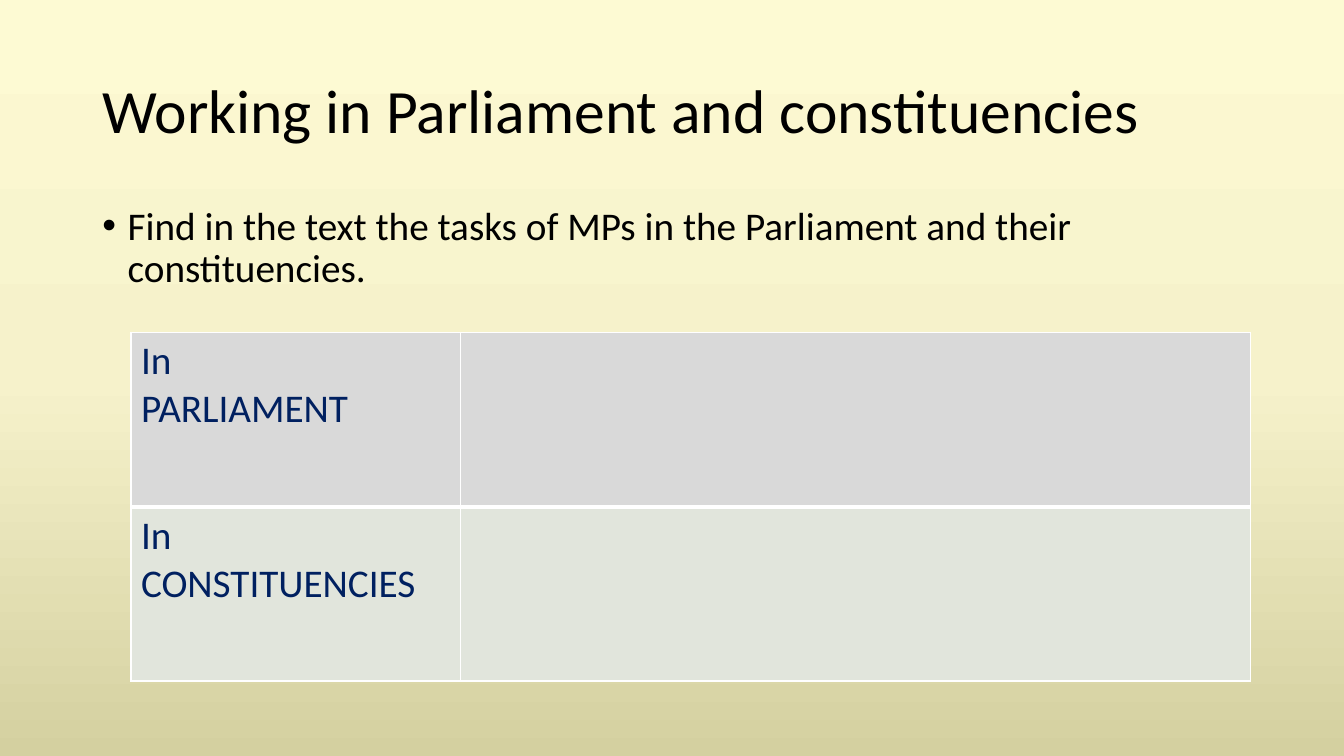
from copy import deepcopy
from lxml import etree
from pptx import Presentation
from pptx import util as u
from pptx.dml.color import RGBColor
from pptx.enum import text
from pptx.oxml import ns

FONT = "Calibri"
BLACK, NAVY, WHITE = "000000", "002060", "FFFFFF"
STOPS = [(0, "FDFAD3"), (0.5, "F6F2CB"), (1, "D4D0A0")]
TITLE = "Working in Parliament and constituencies"
TASK = "Find in the text the tasks of MPs in the Parliament and their constituencies."
ROWS = [
    (["In", "PARLIAMENT"], "D9D9D9"),
    (["In", "CONSTITUENCIES"], "E1E5DC"),
]
COLS = [8.3, 19.92]
HIGH = 4.39
LEFT, WIDE = 2.33, 29.21
THIN, THICK = 1, 3


def paint(hue):
    return RGBColor.from_string(hue)


def write(para, words, size, hue):
    run = para.add_run()
    run.text = words
    run.font.name = FONT
    run.font.size = u.Pt(size)
    run.font.color.rgb = paint(hue)


def add_box(slide, top, high, words, size, anchor):
    box = slide.shapes.add_textbox(u.Cm(LEFT), u.Cm(top), u.Cm(WIDE), u.Cm(high))
    frame = box.text_frame
    frame.word_wrap = True
    frame.vertical_anchor = anchor
    para = frame.paragraphs[0]
    para.line_spacing = 0.9
    write(para, words, size, BLACK)
    return para


def add_bullet(para):
    para.space_before = u.Pt(10)
    props = para._p.get_or_add_pPr()
    props.set("marL", str(u.Cm(0.64)))
    props.set("indent", str(u.Cm(-0.64)))
    etree.SubElement(props, ns.qn("a:buFont")).set("typeface", "Arial")
    etree.SubElement(props, ns.qn("a:buChar")).set("char", "•")


def add_edge(cell, side, width):
    props = cell._tc.get_or_add_tcPr()
    line = etree.SubElement(props, ns.qn("a:ln" + side), w=str(u.Pt(width)))
    solid = etree.SubElement(line, ns.qn("a:solidFill"))
    etree.SubElement(solid, ns.qn("a:srgbClr"), val=WHITE)


def add_back(slide):
    fill = slide.background.fill
    fill.gradient()
    fill.gradient_angle = 270
    stops = slide.element.find(".//" + ns.qn("a:gsLst"))
    stops.append(deepcopy(stops[0]))
    for stop, (place, hue) in zip(fill.gradient_stops, STOPS):
        stop.position = place
        stop.color.rgb = paint(hue)


def add_grid(slide):
    count = len(ROWS)
    table = slide.shapes.add_table(
        count, len(COLS), u.Cm(3.3), u.Cm(8.38), u.Cm(sum(COLS)), u.Cm(HIGH * count)
    ).table
    table.first_row = table.horz_banding = False
    for col, width in zip(table.columns, COLS):
        col.width = u.Cm(width)
    for i, (lines, hue) in enumerate(ROWS):
        table.rows[i].height = u.Cm(HIGH)
        for cell in table.rows[i].cells:
            above = THICK if i else THIN
            below = THICK if i < count - 1 else THIN
            for side, width in zip("LRTB", (THIN, THIN, above, below)):
                add_edge(cell, side, width)
            cell.fill.solid()
            cell.fill.fore_color.rgb = paint(hue)
        frame = table.cell(i, 0).text_frame
        for j, words in enumerate(lines):
            para = frame.add_paragraph() if j else frame.paragraphs[0]
            write(para, words, 28, NAVY)


def main():
    deck = Presentation()
    deck.slide_width, deck.slide_height = u.Cm(33.87), u.Cm(19.05)
    slide = deck.slides.add_slide(deck.slide_layouts[6])
    add_back(slide)
    add_box(slide, 1.01, 3.68, TITLE, 44, text.MSO_ANCHOR.MIDDLE)
    add_bullet(add_box(slide, 5.07, 12.09, TASK, 28, text.MSO_ANCHOR.TOP))
    add_grid(slide)
    deck.save("out.pptx")


if __name__ == "__main__":
    main()
